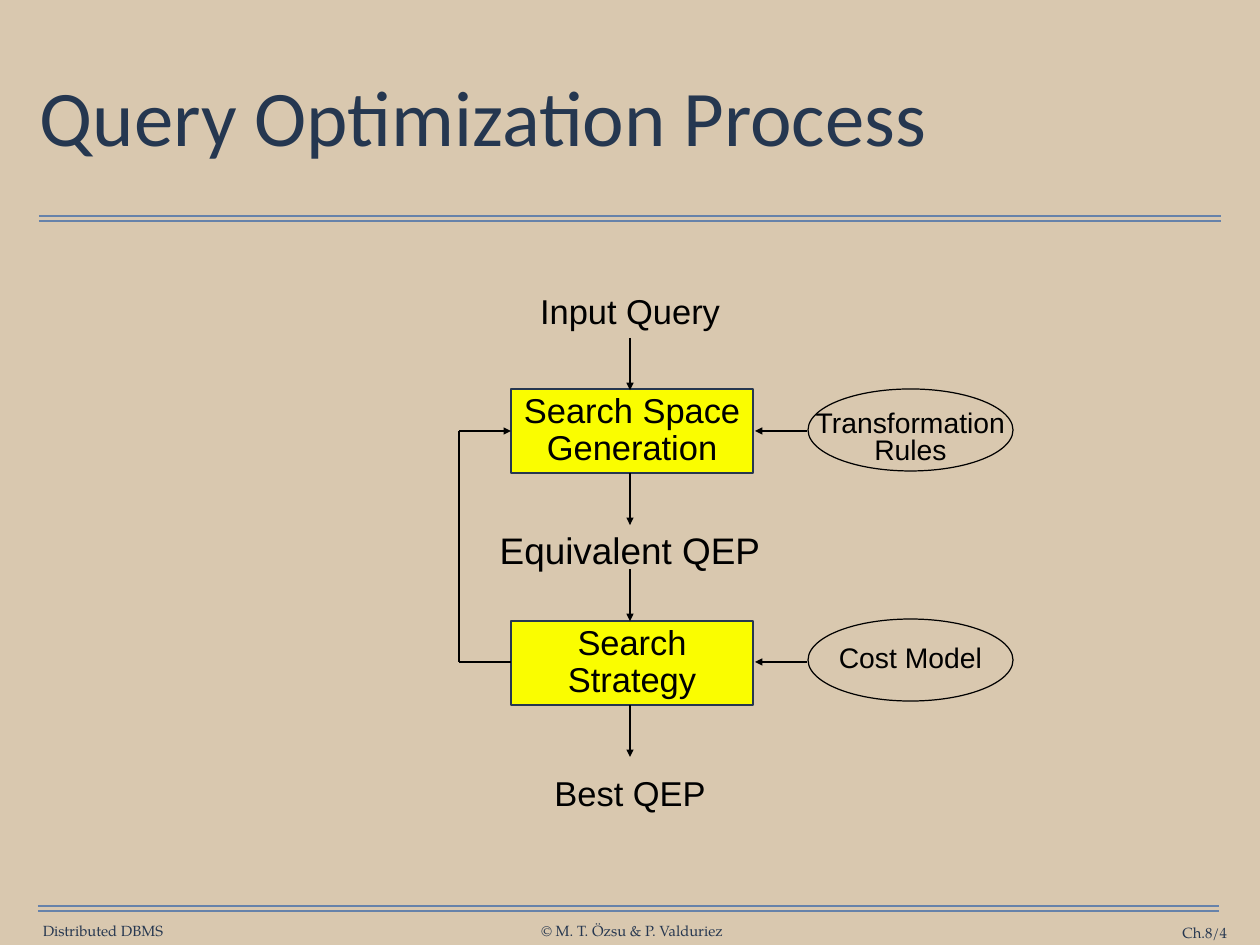
"""Build the Query Optimization Process slide."""
from dataclasses import dataclass

import pptx
import pptx.dml.color
import pptx.enum.shapes
import pptx.enum.text
import pptx.oxml
import pptx.oxml.ns
import pptx.shapes.base
import pptx.slide
import pptx.text.text
import pptx.util

Color = pptx.dml.color.RGBColor
Align = pptx.enum.text.PP_ALIGN
Anchor = pptx.enum.text.MSO_ANCHOR
Preset = pptx.enum.shapes.MSO_SHAPE

EMU_PER_PX = 10320
SAND = Color(0xD9, 0xC8, 0xAF)
YELLOW = Color(0xFA, 0xFD, 0x00)
BLACK = Color(0x00, 0x00, 0x00)
NAVY = Color(0x26, 0x37, 0x50)
TITLE_NAVY = Color(0x25, 0x37, 0x50)
RULE_BLUE = Color(0x66, 0x82, 0xAA)

FLOW_X, LOOP_X, STEP_X, STEP_WIDTH = 630, 459, 511, 242
ARROW_LENGTH = 52
GENERATION_Y, STRATEGY_Y = 431, 662


@dataclass(frozen=True)
class Caption:
    """Free text in a box."""
    text: str
    left: int
    top: int
    width: int
    height: int
    size: int
    font: str = "Arial"
    color: Color = BLACK
    align: Align = Align.CENTER
    margin_x: int = 12
    margin_y: int = 6


@dataclass(frozen=True)
class Node:
    """An outlined shape holding its own text."""
    preset: Preset
    lines: tuple[str, ...]
    left: int
    top: int
    width: int
    height: int
    size: int
    spacing: float
    outline: Color
    fill: Color | None = None
    margin_top: int = 0


@dataclass(frozen=True)
class Link:
    """A straight line, with or without an arrowhead."""
    x1: int
    y1: int
    x2: int
    y2: int
    arrow: bool = True
    color: Color = BLACK
    width: float = 1.5


def px(length: int) -> pptx.util.Emu:
    """Turn px into EMU."""
    return pptx.util.Emu(length * EMU_PER_PX)


def place(shape: pptx.shapes.base.BaseShape, left: int, top: int, width: int, height: int) -> None:
    """Move and size a shape."""
    shape.left, shape.top, shape.width, shape.height = map(px, (left, top, width, height))


def set_margins(frame: pptx.text.text.TextFrame, horizontal: int, top: int, bottom: int) -> None:
    """Set the insets of a text frame."""
    frame.margin_left = frame.margin_right = px(horizontal)
    frame.margin_top, frame.margin_bottom = px(top), px(bottom)


def style(paragraph: pptx.text.text._Paragraph, font: str, size: int, color: Color,
          align: Align, spacing: float = 1.0) -> None:
    """Format a whole paragraph."""
    paragraph.alignment = align
    paragraph.line_spacing = spacing
    paragraph.font.name = font
    paragraph.font.size = pptx.util.Pt(size)
    paragraph.font.color.rgb = color


def draw_title(slide: pptx.slide.Slide, text: str) -> None:
    """Fill the title placeholder."""
    title = slide.shapes.title
    place(title, 35, 43, 1191, 156)
    frame = title.text_frame
    frame.text = text
    frame.word_wrap = True
    frame.auto_size = pptx.enum.text.MSO_AUTO_SIZE.NONE
    frame.vertical_anchor = Anchor.MIDDLE
    set_margins(frame, 5, 5, 5)
    style(frame.paragraphs[0], "Calibri", 64, TITLE_NAVY, Align.LEFT, 0.9)


def draw_caption(slide: pptx.slide.Slide, caption: Caption) -> None:
    """Draw one text box."""
    box = slide.shapes.add_textbox(*map(px, (caption.left, caption.top, caption.width, caption.height)))
    frame = box.text_frame
    frame.text = caption.text
    frame.word_wrap = caption.align == Align.RIGHT
    frame.vertical_anchor = Anchor.MIDDLE
    set_margins(frame, caption.margin_x, caption.margin_y, caption.margin_y)
    style(frame.paragraphs[0], caption.font, caption.size, caption.color, caption.align)


def draw_node(slide: pptx.slide.Slide, node: Node) -> None:
    """Draw one step or input of the process."""
    shape = slide.shapes.add_shape(node.preset, *map(px, (node.left, node.top, node.width, node.height)))
    shape.shadow.inherit = False
    if node.fill is None:
        shape.fill.background()
    else:
        shape.fill.solid()
        shape.fill.fore_color.rgb = node.fill
    shape.line.color.rgb = node.outline
    shape.line.width = pptx.util.Pt(1)
    frame = shape.text_frame
    frame.text = "\n".join(node.lines)
    frame.word_wrap = False
    frame.vertical_anchor = Anchor.MIDDLE
    set_margins(frame, 0, node.margin_top, 0)
    for paragraph in frame.paragraphs:
        style(paragraph, "Arial", node.size, BLACK, Align.CENTER, node.spacing)


def draw_link(slide: pptx.slide.Slide, link: Link) -> None:
    """Draw one connector."""
    connector = slide.shapes.add_connector(
        pptx.enum.shapes.MSO_CONNECTOR.STRAIGHT, *map(px, (link.x1, link.y1, link.x2, link.y2)))
    connector.line.color.rgb = link.color
    connector.line.width = pptx.util.Pt(link.width)
    if link.arrow:
        head = pptx.oxml.parse_xml(f'<a:tailEnd {pptx.oxml.ns.nsdecls("a")} type="triangle"/>')
        connector.line._get_or_add_ln().append(head)
    effects = pptx.oxml.parse_xml(f'<a:effectLst {pptx.oxml.ns.nsdecls("a")}/>')
    connector._element.spPr.append(effects)


def footer(text: str, left: int, top: int, width: int, align: Align = Align.CENTER) -> Caption:
    """Describe one footer entry."""
    return Caption(text, left, top, width, 18, 12, "TeX Gyre Pagella", NAVY, align, 0, 0)


def stage(text: str, top: int, width: int, height: int = 54, size: int = 28) -> Caption:
    """Describe a query state centred on the flow."""
    return Caption(text, FLOW_X - width // 2, top, width, height, size)


def step(top: int, *lines: str) -> Node:
    """Describe a process step."""
    return Node(Preset.RECTANGLE, lines, STEP_X, top, STEP_WIDTH, 84, 28, 0.9, NAVY, YELLOW)


def knowledge(top: int, margin_top: int, *lines: str) -> Node:
    """Describe an input to a step."""
    return Node(Preset.OVAL, lines, 808, top, 205, 82, 23, 0.8, BLACK, None, margin_top)


RULES = [Link(left, y, right, y, False, RULE_BLUE, 1)
         for left, right, top in ((39, 1221, 216), (38, 1219, 906)) for y in (top, top + 5)]
FLOW = [Link(FLOW_X, top, FLOW_X, top + ARROW_LENGTH) for top in (338, 473, 569, 705)]
INPUTS = [Link(807, y, 807 - ARROW_LENGTH, y) for y in (GENERATION_Y, STRATEGY_Y)]
LOOP = [
    Link(STEP_X, STRATEGY_Y, LOOP_X, STRATEGY_Y, False),
    Link(LOOP_X, STRATEGY_Y, LOOP_X, GENERATION_Y, False),
    Link(LOOP_X, GENERATION_Y, STEP_X, GENERATION_Y),
]
NODES = [
    step(389, "Search Space", "Generation"),
    step(621, "Search", "Strategy"),
    knowledge(389, 18, "Transformation", "Rules"),
    knowledge(619, 0, "Cost Model"),
]
CAPTIONS = [
    footer("Distributed DBMS", 42, 922, 122),
    footer("© M. T. Özsu & P. Valduriez", 540, 922, 184),
    footer("Ch.8/4", 1091, 924, 136, Align.RIGHT),
    stage("Input Query", 284, 208),
    stage("Equivalent QEP", 521, 288, 58, 30),
    stage("Best QEP", 766, 178),
]


def main() -> None:
    """Build and save the slide."""
    deck = pptx.Presentation()
    deck.slide_width, deck.slide_height = px(1260), px(945)
    slide = deck.slides.add_slide(deck.slide_layouts.get_by_name("Title Only"))
    slide.background.fill.solid()
    slide.background.fill.fore_color.rgb = SAND
    draw_title(slide, "Query Optimization Process")
    for node in NODES:
        draw_node(slide, node)
    for link in RULES + FLOW + INPUTS + LOOP:
        draw_link(slide, link)
    for caption in CAPTIONS:
        draw_caption(slide, caption)
    deck.save("out.pptx")


if __name__ == "__main__":
    main()
